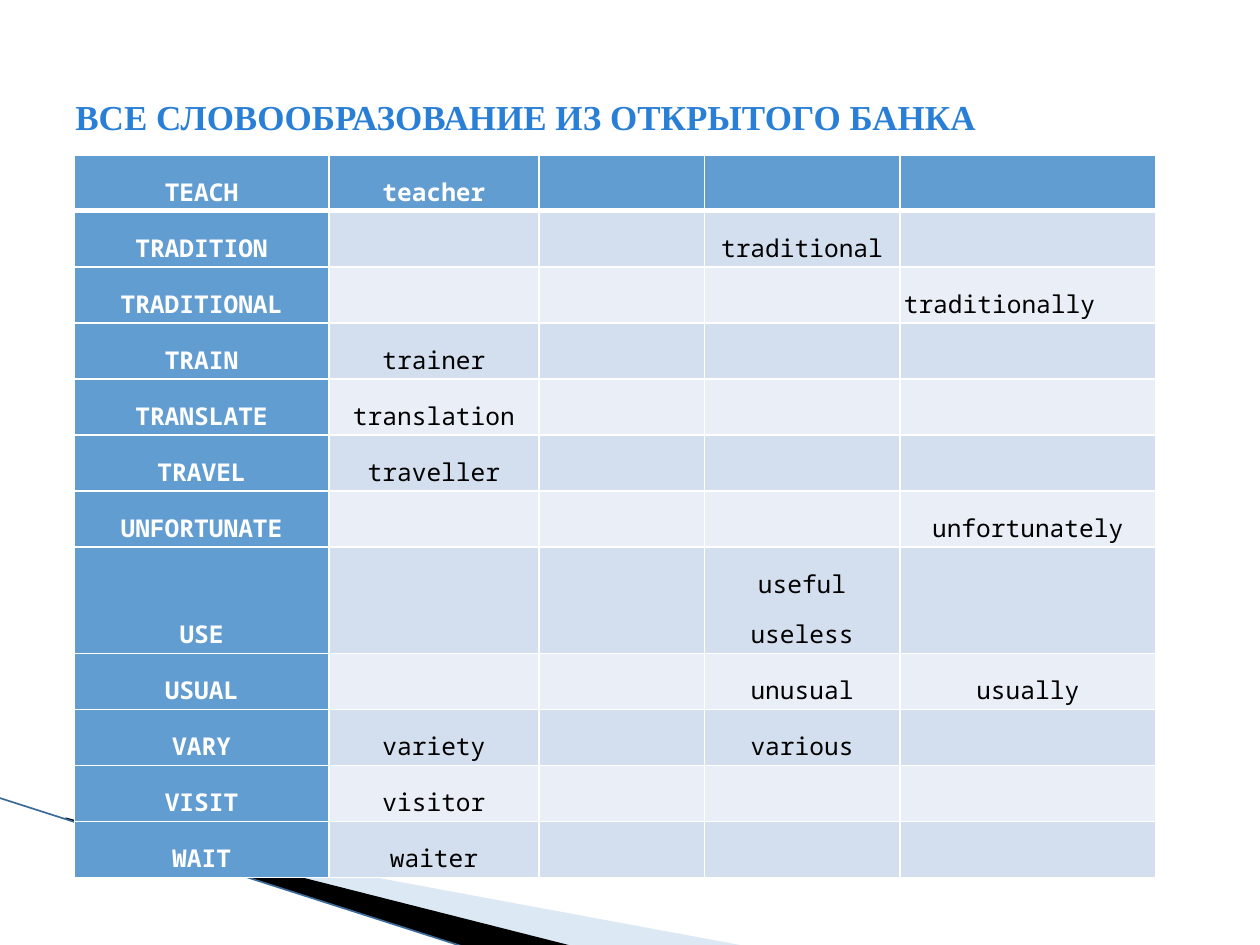
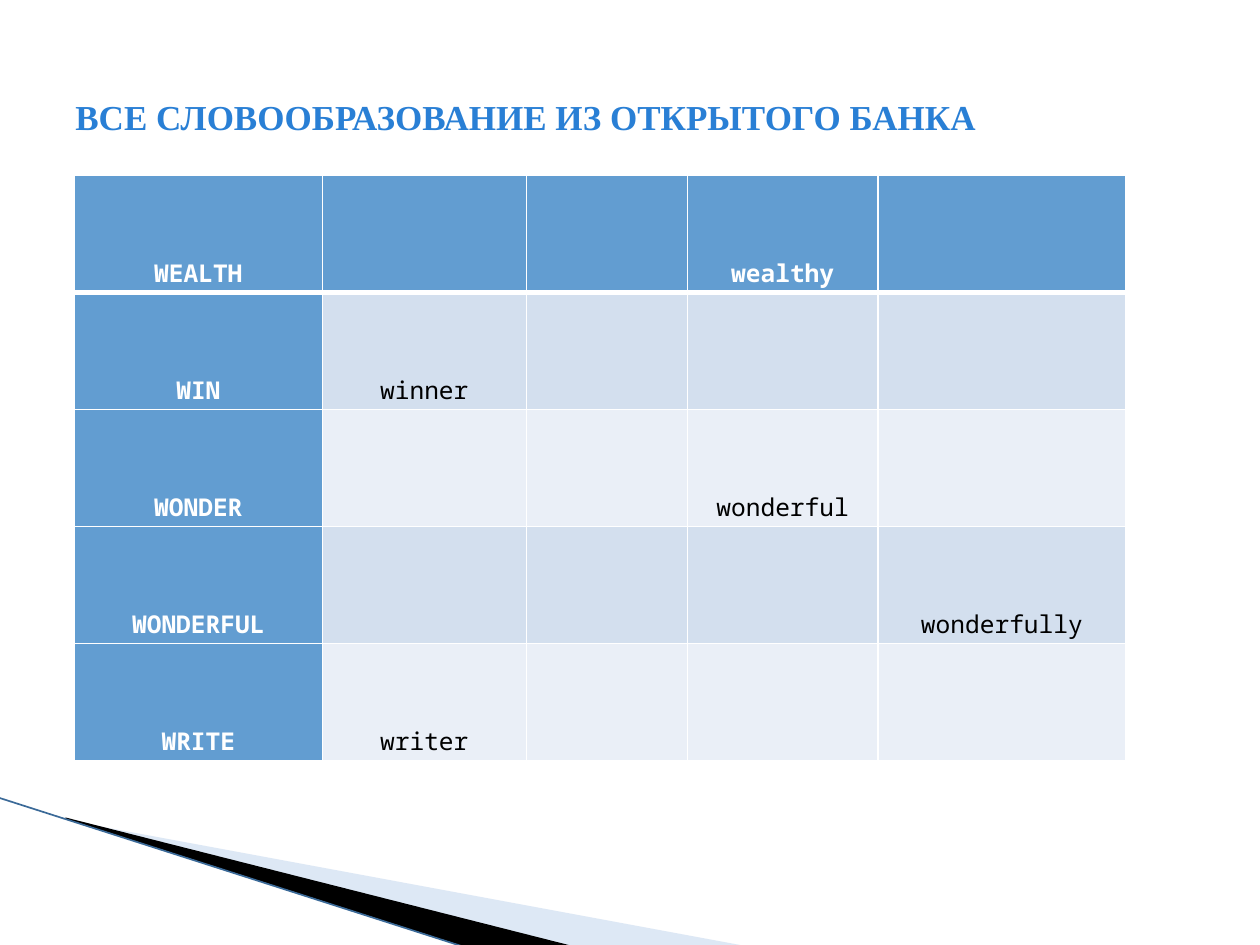
from lxml import etree
from pptx import Presentation
from pptx.dml.color import RGBColor
from pptx.enum.shapes import MSO_CONNECTOR
from pptx.enum.text import MSO_ANCHOR, PP_ALIGN
from pptx.oxml.ns import qn
from pptx.util import Cm, Pt

STRAIGHT = MSO_CONNECTOR.STRAIGHT
MIDDLE, BOTTOM = MSO_ANCHOR.MIDDLE, MSO_ANCHOR.BOTTOM
LEFT, CENTER = PP_ALIGN.LEFT, PP_ALIGN.CENTER

WHITE, BLACK = "FFFFFF", "000000"
BLUE, BAND_DARK, BAND_LIGHT = "629DD1", "D3DFEE", "EAEFF7"
TITLE_BLUE, WEDGE_BLUE, EDGE_BLUE = "297FD5", "ABC6E6", "3B6A98"

TITLE = "ВСЕ СЛОВООБРАЗОВАНИЕ ИЗ ОТКРЫТОГО БАНКА"
TITLE_BOX = (1.27, 0.76, 22.86, 3.18)
TITLE_FONT = {"name": "Times New Roman", "size": Pt(20), "bold": True}
CELL_FONT = {"name": "Noto Sans Mono", "size": Pt(14)}
CELL_FORMAT = {"vertical_anchor": BOTTOM, "margin_left": Cm(0.08), "margin_right": Cm(0.08),
               "margin_top": Cm(0.05), "margin_bottom": Cm(0.05)}

# Each row: base word, then its derived forms by column number
NOUN, ADJECTIVE, ADVERB = 1, 3, 4
WORDS_T_TO_W = [
    ("TEACH", {NOUN: "teacher"}),
    ("TRADITION", {ADJECTIVE: "traditional"}),
    ("TRADITIONAL", {ADVERB: "traditionally"}),
    ("TRAIN", {NOUN: "trainer"}),
    ("TRANSLATE", {NOUN: "translation"}),
    ("TRAVEL", {NOUN: "traveller"}),
    ("UNFORTUNATE", {ADVERB: "unfortunately"}),
    ("USE", {ADJECTIVE: "useful\nuseless"}),
    ("USUAL", {ADJECTIVE: "unusual", ADVERB: "usually"}),
    ("VARY", {NOUN: "variety", ADJECTIVE: "various"}),
    ("VISIT", {NOUN: "visitor"}),
    ("WAIT", {NOUN: "waiter"}),
]
WORDS_W = [
    ("WEALTH", {ADJECTIVE: "wealthy"}),
    ("WIN", {NOUN: "winner"}),
    ("WONDER", {ADJECTIVE: "wonderful"}),
    ("WONDERFUL", {ADVERB: "wonderfully"}),
    ("WRITE", {NOUN: "writer"}),
]
LEFT_ALIGNED = {"traditionally"}


def rgb(value):
    return RGBColor.from_string(value)


def apply(target, values):
    for name, value in values.items():
        setattr(target, name, value)


def add_run(p, text, color, font):
    r = p.add_run()
    r.text = text
    apply(r.font, font)
    r.font.color.rgb = rgb(color)


def add_wedge(s, left, top, points, color, opacity=None):
    corners = [(Cm(left + x), Cm(top + y)) for x, y in points]
    builder = s.shapes.build_freeform(*corners[0])
    builder.add_line_segments(corners[1:], close=True)
    sp = builder.convert_to_shape()
    sp.shadow.inherit = False
    sp.fill.solid()
    sp.fill.fore_color.rgb = rgb(color)
    sp.line.fill.background()
    if opacity:
        srgb = sp.fill._xPr.find(".//" + qn("a:srgbClr"))
        etree.SubElement(srgb, qn("a:alpha"), val=str(opacity * 1000))


def add_corner_band(s, left, top):
    add_wedge(s, left, top, [(1.4, 0.46), (15.11, 3), (11.58, 3), (1.4, 0.43)], WEDGE_BLUE, 40)
    add_wedge(s, left, top, [(1.35, 0.4), (11.61, 3), (9.45, 3.02), (1.37, 0.43)], BLACK)
    edge = s.shapes.add_connector(STRAIGHT, Cm(left), Cm(top), Cm(left + 9.42), Cm(top + 3.02))
    edge.line.color.rgb = rgb(EDGE_BLUE)
    edge.line.width = Pt(0.95)
    etree.SubElement(edge._element.spPr, qn("a:effectLst"))


def add_title(s, left, top, width, height):
    tf = s.shapes.add_textbox(Cm(left), Cm(top), Cm(width), Cm(height)).text_frame
    apply(tf, {"word_wrap": True, "vertical_anchor": MIDDLE})
    add_run(tf.paragraphs[0], TITLE, TITLE_BLUE, TITLE_FONT)


def set_borders(cell, top, bottom):
    """Draw white borders; must run before the cell gets its fill."""
    tc_pr = cell._tc.get_or_add_tcPr()
    for side, width in (("L", 1), ("R", 1), ("T", top), ("B", bottom)):
        ln = etree.SubElement(tc_pr, qn("a:ln" + side), w=str(Pt(width)))
        fill = etree.SubElement(ln, qn("a:solidFill"))
        etree.SubElement(fill, qn("a:srgbClr"), val=WHITE)


def fill_cell(cell, text, row, col):
    is_head = row == 0 or col == 0
    apply(cell, CELL_FORMAT)
    set_borders(cell, 3 if row == 1 else 1, 3 if row == 0 else 1)
    cell.fill.solid()
    band = BAND_DARK if row % 2 else BAND_LIGHT
    cell.fill.fore_color.rgb = rgb(BLUE if is_head else band)
    if not text:
        return
    tf = cell.text_frame
    for i, line in enumerate(text.split("\n")):
        p = tf.add_paragraph() if i else tf.paragraphs[0]
        apply(p, {"alignment": LEFT if line in LEFT_ALIGNED else CENTER, "line_spacing": 1.5})
        add_run(p, line, WHITE if is_head else BLACK, {**CELL_FONT, "bold": is_head})


def add_word_table(s, left, top, col_widths, row_height, words, tall_rows):
    heights = [tall_rows.get(word, row_height) for word, _ in words]
    table = s.shapes.add_table(len(words), len(col_widths), Cm(left), Cm(top),
                               Cm(sum(col_widths)), Cm(sum(heights))).table
    for column, width in zip(table.columns, col_widths):
        column.width = Cm(width)
    for row, (word, forms) in enumerate(words):
        table.rows[row].height = Cm(heights[row])
        for col in range(len(col_widths)):
            fill_cell(table.cell(row, col), forms.get(col, "") if col else word, row, col)


def add_word_slide(prs, top, col_widths, row_height, words, tall_rows):
    s = prs.slides.add_slide(prs.slide_layouts[6])
    add_corner_band(s, -0.03, 16.08)
    add_word_table(s, 1.5, top, col_widths, row_height, words, tall_rows)
    add_title(s, *TITLE_BOX)


def main():
    prs = Presentation()
    prs.slide_width, prs.slide_height = Cm(25.4), Cm(19.05)
    add_word_slide(prs, 3.12, (5.13, 4.24, 3.33, 3.94, 5.16), 1.13, WORDS_T_TO_W, {"USE": 2.15})
    add_word_slide(prs, 3.53, (5, 4.11, 3.25, 3.84, 5), 2.36, WORDS_W, {})
    prs.save("out.pptx")


if __name__ == "__main__":
    main()
